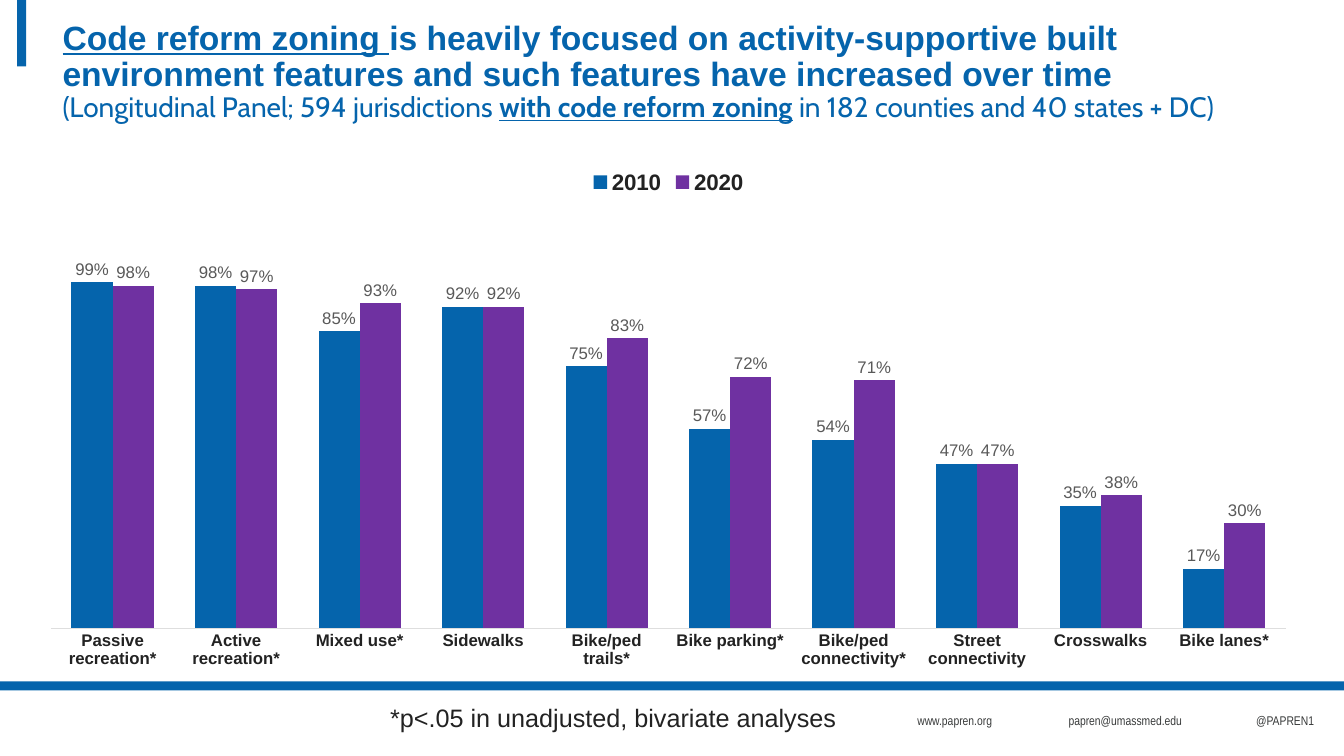
from dataclasses import dataclass

from pptx import Presentation
from pptx.chart.data import CategoryChartData
from pptx.dml.color import RGBColor
from pptx.enum.chart import (XL_CHART_TYPE, XL_LABEL_POSITION,
                             XL_LEGEND_POSITION, XL_TICK_MARK)
from pptx.enum.shapes import MSO_SHAPE
from pptx.enum.text import MSO_ANCHOR, MSO_AUTO_SIZE
from pptx.util import Inches, Pt

COLUMNS = XL_CHART_TYPE.COLUMN_CLUSTERED
OUTSIDE_END = XL_LABEL_POSITION.OUTSIDE_END
LEGEND_TOP = XL_LEGEND_POSITION.TOP
NO_TICK = XL_TICK_MARK.NONE
RECT = MSO_SHAPE.RECTANGLE
TOP = MSO_ANCHOR.TOP
FIT_SHAPE = MSO_AUTO_SIZE.SHAPE_TO_FIT_TEXT


@dataclass(frozen=True)
class Theme:
    blue: str = "0564AC"
    purple: str = "6F31A1"
    ink: str = "222222"
    contact: str = "383A3A"
    label: str = "595959"
    axis: str = "DEDEDE"
    body_font: str = "Arial"
    contact_font: str = "Arial Narrow"
    subtitle_font: str = "Cabin"
    title_size: int = 24
    subtitle_size: int = 20
    note_size: int = 18
    legend_size: int = 16
    chart_size: int = 12
    contact_size: int = 9


FEATURES = [
    ("Passive recreation*", 0.99, 0.98),
    ("Active recreation*", 0.98, 0.97),
    ("Mixed use*", 0.85, 0.93),
    ("Sidewalks", 0.92, 0.92),
    ("Bike/ped trails*", 0.75, 0.83),
    ("Bike parking*", 0.57, 0.72),
    ("Bike/ped connectivity*", 0.54, 0.71),
    ("Street connectivity", 0.47, 0.47),
    ("Crosswalks", 0.35, 0.38),
    ("Bike lanes*", 0.17, 0.30),
]
CONTACTS = [
    ("www.papren.org", 9, 0.96),
    ("papren@umassmed.edu", 10.5, 1.34),
    ("@PAPREN1", 12.36, 0.79),
]


class SlideBuilder:
    def __init__(self, slide, theme):
        self.s = slide
        self.theme = theme

    def style(self, font, size, color, name=None, bold=False, underline=False):
        font.name = name or self.theme.body_font
        font.size = Pt(size)
        font.bold = bold
        font.underline = underline
        font.color.rgb = RGBColor.from_string(color)

    def bar(self, x, y, w, h):
        sp = self.s.shapes.add_shape(RECT, Inches(x), Inches(y), Inches(w), Inches(h))
        sp.shadow.inherit = False
        sp.fill.solid()
        sp.fill.fore_color.rgb = RGBColor.from_string(self.theme.blue)
        sp.line.fill.background()

    def text_frame(self, x, y, w, h):
        sp = self.s.shapes.add_textbox(Inches(x), Inches(y), Inches(w), Inches(h))
        return sp.text_frame

    def line_of_text(self, text, x, y, w, h, size, color, name=None):
        tf = self.text_frame(x, y, w, h)
        tf.word_wrap = False
        tf.auto_size = FIT_SHAPE
        r = tf.paragraphs[0].add_run()
        r.text = text
        self.style(r.font, size, color, name)

    def title(self, headline, subtitle, x, y, w, h):
        """Each part is a list of (text, bold, underline)."""
        t = self.theme
        tf = self.text_frame(x, y, w, h)
        tf.word_wrap = True
        tf.vertical_anchor = TOP
        tf.margin_left = tf.margin_right = tf.margin_top = tf.margin_bottom = 0
        p = tf.paragraphs[0]
        p.line_spacing = 0.9
        self.runs(p, headline, t.title_size, t.body_font)
        p.add_line_break()
        self.runs(p, subtitle, t.subtitle_size, t.subtitle_font)

    def runs(self, p, parts, size, name):
        for text, bold, underline in parts:
            r = p.add_run()
            r.text = text
            self.style(r.font, size, self.theme.blue, name, bold, underline)

    def column_chart(self, rows, names, colors, x, y, w, h):
        t = self.theme
        data = CategoryChartData(number_format="0%")
        data.categories = [row[0] for row in rows]
        for i, name in enumerate(names, start=1):
            data.add_series(name, [row[i] for row in rows])
        chart = self.s.shapes.add_chart(
            COLUMNS, Inches(x), Inches(y), Inches(w), Inches(h), data).chart
        self.style(chart.font, t.chart_size, t.ink)
        chart.has_title = False
        chart.has_legend = True
        chart.legend.position = LEGEND_TOP
        chart.legend.include_in_layout = False
        self.style(chart.legend.font, t.legend_size, t.ink, bold=True)

        axis = chart.category_axis
        axis.major_tick_mark = axis.minor_tick_mark = NO_TICK
        axis.format.line.color.rgb = RGBColor.from_string(t.axis)
        axis.format.line.width = Pt(0.75)
        self.style(axis.tick_labels.font, t.chart_size, t.ink, bold=True)
        values = chart.value_axis
        values.minimum_scale, values.maximum_scale = 0, 1.2
        values.has_major_gridlines = False
        values.visible = False

        plot = chart.plots[0]
        plot.gap_width, plot.overlap = 100, 0
        plot.vary_by_categories = False
        for series, color in zip(plot.series, colors):
            series.format.fill.solid()
            series.format.fill.fore_color.rgb = RGBColor.from_string(color)
            labels = series.data_labels
            labels.show_value = True
            labels.position = OUTSIDE_END
            labels.number_format = "0%"
            labels.number_format_is_linked = False
            self.style(labels.font, t.chart_size, t.label)


def main():
    prs = Presentation()
    prs.slide_width, prs.slide_height = Inches(13.33), Inches(7.5)
    theme = Theme()
    b = SlideBuilder(prs.slides.add_slide(prs.slide_layouts[6]), theme)
    b.bar(0, 6.76, 13.33, 0.09)
    b.bar(0.17, 0, 0.09, 0.66)
    for text, x, w in CONTACTS:
        b.line_of_text(text, x, 7.02, w, 0.25, theme.contact_size,
                       theme.contact, theme.contact_font)
    b.title(
        [("Code reform zoning ", True, True),
         ("is heavily focused on activity-supportive built environment features "
          "and such features have increased over time", True, False)],
        [("(Longitudinal Panel; 594 jurisdictions ", False, False),
         ("with code reform zoning", True, True),
         (" in 182 counties and 40 states + DC)", False, False)],
        0.62, 0.21, 12.08, 0.89)
    b.column_chart(FEATURES, ("2010", "2020"), (theme.blue, theme.purple),
                   0.25, 1.57, 12.76, 5.16)
    b.line_of_text("*p<.05 in unadjusted, bivariate analyses", 3.77, 6.92, 4.67, 0.4,
                   theme.note_size, theme.ink)
    prs.save("out.pptx")


if __name__ == "__main__":
    main()
